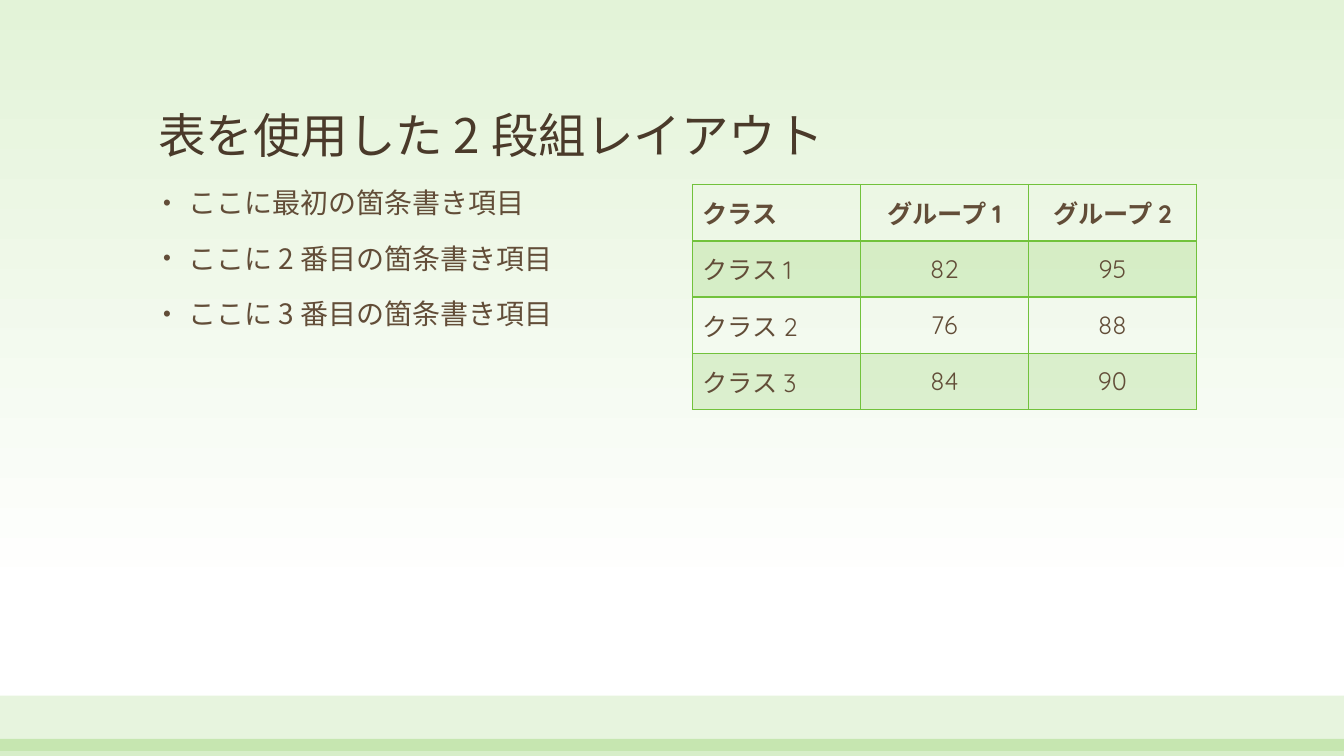
from dataclasses import dataclass

from lxml import etree
from pptx import Presentation
from pptx.dml.color import RGBColor
from pptx.enum.shapes import MSO_SHAPE
from pptx.enum.text import MSO_ANCHOR, PP_ALIGN
from pptx.oxml.ns import qn
from pptx.util import Pt

RECT = MSO_SHAPE.RECTANGLE
TOP, MIDDLE, BOTTOM = MSO_ANCHOR.TOP, MSO_ANCHOR.MIDDLE, MSO_ANCHOR.BOTTOM
LEFT, CENTER = PP_ALIGN.LEFT, PP_ALIGN.CENTER

SANS, ROUNDED = "Noto Sans CJK JP", "Quicksand"
GREEN, TITLE_BROWN, BROWN = "72C23C", "4A3A2A", "624D38"


@dataclass
class Band:
    top: float
    height: float
    opacity: int


@dataclass
class TextBlock:
    box: tuple[float, float, float, float]
    lines: list[str]
    size: float
    color: str
    anchor: MSO_ANCHOR
    bulleted: bool = False


BANDS = [Band(496.8, 39.6, 17), Band(527.76, 12.24, 28)]

TEXTS = [
    TextBlock((105.84, 34.56, 748.8, 85.68), ["表を使用した 2 段組レイアウト"],
              34, TITLE_BROWN, BOTTOM),
    TextBlock((105.84, 131.76, 360, 342),
              ["ここに最初の箇条書き項目", "ここに 2 番目の箇条書き項目",
               "ここに 3 番目の箇条書き項目"],
              20, BROWN, TOP, bulleted=True),
]

ROWS = [
    ["クラス", "グループ 1", "グループ 2"],
    ["クラス 1", "82", "95"],
    ["クラス 2", "76", "88"],
    ["クラス 3", "84", "90"],
]
COL_WIDTH, ROW_HEIGHT = 120, 40.2


def rgb(color: str) -> RGBColor:
    return RGBColor.from_string(color)


def set_fill(fill, color: str, opacity: int) -> None:
    fill.solid()
    fill.fore_color.rgb = rgb(color)
    clr = fill._xPr.find(qn("a:solidFill"))[0]
    etree.SubElement(clr, qn("a:alpha"), val=str(opacity * 1000))


def add_run(p, text: str, font: str, size: float, color: str, bold: bool = False) -> None:
    r = p.add_run()
    r.text = text
    r.font.name, r.font.size, r.font.bold = font, Pt(size), bold
    r.font.color.rgb = rgb(color)
    etree.SubElement(r.font._element, qn("a:ea"), typeface=SANS)


def add_bullet(p) -> None:
    pPr = p._p.get_or_add_pPr()
    pPr.set("marL", str(Pt(21.6)))
    pPr.set("indent", str(Pt(-18)))
    etree.SubElement(pPr, qn("a:buSzPct"), val="80000")
    etree.SubElement(pPr, qn("a:buFont"), typeface="Arial")
    etree.SubElement(pPr, qn("a:buChar"), char="•")


def add_band(s, band: Band) -> None:
    sp = s.shapes.add_shape(RECT, 0, Pt(band.top), Pt(960), Pt(band.height))
    sp.shadow.inherit = False
    sp.line.fill.background()
    set_fill(sp.fill, GREEN, band.opacity)


def add_text(s, block: TextBlock) -> None:
    tf = s.shapes.add_textbox(*map(Pt, block.box)).text_frame
    tf.word_wrap = True
    tf.vertical_anchor = block.anchor
    for i, line in enumerate(block.lines):
        p = tf.paragraphs[0] if i == 0 else tf.add_paragraph()
        p.line_spacing = 0.9
        if i > 0:
            p.space_before = Pt(18)
        if block.bulleted:
            add_bullet(p)
        add_run(p, line, SANS, block.size, block.color)


def set_borders(cell, widths: dict[str, float]) -> None:
    tcPr = cell._tc.get_or_add_tcPr()
    for i, (side, width) in enumerate(widths.items()):
        ln = etree.Element(qn(f"a:ln{side}"), w=str(Pt(width)))
        fill = etree.SubElement(ln, qn("a:solidFill"))
        etree.SubElement(fill, qn("a:srgbClr"), val=GREEN)
        tcPr.insert(i, ln)


def add_score_table(s) -> None:
    n_rows, n_cols = len(ROWS), len(ROWS[0])
    table = s.shapes.add_table(n_rows, n_cols, Pt(494.64), Pt(131.76),
                               Pt(COL_WIDTH * n_cols), Pt(ROW_HEIGHT * n_rows)).table
    table.first_row = table.horz_banding = False
    for col in table.columns:
        col.width = Pt(COL_WIDTH)
    for i, row in enumerate(ROWS):
        table.rows[i].height = Pt(ROW_HEIGHT)
        for j, text in enumerate(row):
            cell = table.cell(i, j)
            cell.vertical_anchor = MIDDLE
            if i % 2:
                set_fill(cell.fill, GREEN, 20)
            else:
                cell.fill.background()
            # The rule under the header is heavier
            set_borders(cell, {"L": 1, "R": 1, "T": 2 if i == 1 else 1,
                               "B": 2 if i == 0 else 1})
            p = cell.text_frame.paragraphs[0]
            p.alignment = CENTER if j else LEFT
            add_run(p, text, ROUNDED, 18, BROWN, bold=i == 0)


def main() -> None:
    prs = Presentation()
    prs.slide_width, prs.slide_height = Pt(960), Pt(540)
    s = prs.slides.add_slide(prs.slide_layouts[6])

    # Background fading from green to white
    fill = s.background.fill
    fill.gradient()
    fill.gradient_angle = 270
    for stop, color, position in zip(fill.gradient_stops, ["E3F3D8", "FFFFFF"], [0, 0.79]):
        stop.color.rgb = rgb(color)
        stop.position = position

    # Bands along the bottom edge
    for band in BANDS:
        add_band(s, band)

    # Title, bullets and table
    for block in TEXTS:
        add_text(s, block)
    add_score_table(s)

    prs.save("out.pptx")


if __name__ == "__main__":
    main()
